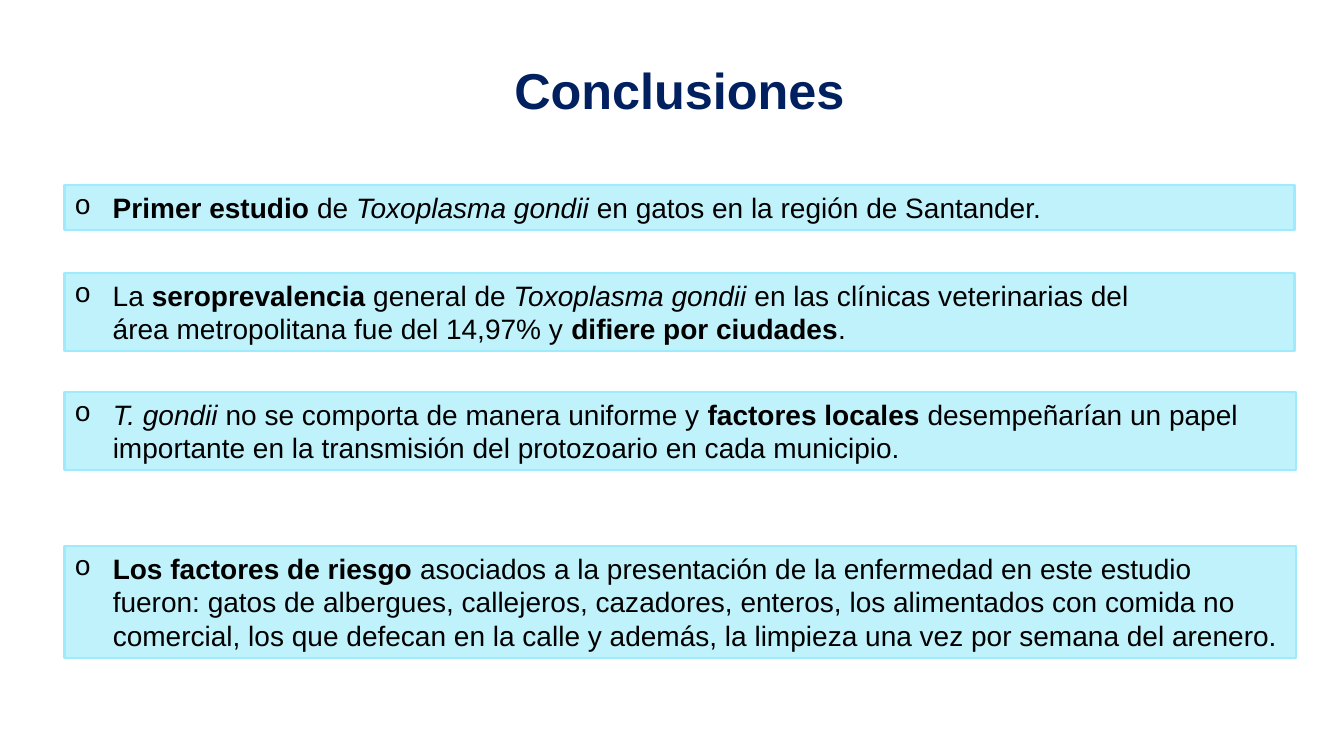
from lxml import etree
from pptx import Presentation
from pptx.dml.color import RGBColor
from pptx.enum import shapes, text
from pptx.oxml.ns import qn
from pptx.util import Inches, Pt

NBSP = chr(160)  # keeps "área metropolitana" on one line
COLORS = {"title": "002060", "text": "000000", "fill": "C0F2FB", "line": "9DEBFC"}
TITLE = "Conclusiones"

# Each box: top, width, height, then runs of (text, style); b = bold, i = italic
CONCLUSIONS = [
    (1.84, 12.2, 0.44, [
        ("Primer estudio ", "b"), ("de ", ""), ("Toxoplasma gondii", "i"),
        (" en gatos en la región de Santander.", "")]),
    (2.71, 12.2, 0.77, [
        ("La ", ""), ("seroprevalencia", "b"), (" general de ", ""),
        ("Toxoplasma gondii", "i"),
        (f" en las clínicas veterinarias del área{NBSP}metropolitana fue del 14,97% y ", ""),
        ("difiere por ciudades", "b"), (".", "")]),
    (3.89, 12.21, 0.77, [
        ("T. gondii ", "i"), ("no se comporta de manera uniforme y ", ""),
        ("factores locales ", "b"),
        ("desempeñarían un papel importante en la transmisión del protozoario "
         "en cada municipio.", "")]),
    (5.42, 12.21, 1.11, [
        ("Los factores de riesgo ", "b"),
        ("asociados a la presentación de la enfermedad en este estudio fueron: "
         "gatos de albergues, callejeros, cazadores, enteros, los alimentados con "
         "comida no comercial, los que defecan en la calle y además, la limpieza "
         "una vez por semana del arenero.", "")]),
]
LEFT, INDENT = 0.64, 0.38


def rgb(name):
    return RGBColor.from_string(COLORS[name])


def add_run(p, content, size=20, color="text", bold=False, italic=False):
    r = p.add_run()
    r.text = content
    r.font.name, r.font.size = "Arial", Pt(size)
    r.font.bold, r.font.italic = bold, italic
    r.font.color.rgb = rgb(color)


def add_bullet(p):
    pPr = p._p.get_or_add_pPr()
    pPr.set("marL", str(Inches(INDENT)))
    pPr.set("indent", str(-Inches(INDENT)))
    etree.SubElement(pPr, qn("a:buFont")).set("typeface", "Courier New")
    etree.SubElement(pPr, qn("a:buChar")).set("char", "o")


prs = Presentation()
prs.slide_width, prs.slide_height = Inches(13.33), Inches(7.5)
s = prs.slides.add_slide(prs.slide_layouts[5])

# Title
title = s.shapes.title
title.left, title.top = Inches(0.43), Inches(0.44)
title.width, title.height = Inches(12.62), Inches(0.96)
title.text_frame.vertical_anchor = text.MSO_ANCHOR.MIDDLE
p = title.text_frame.paragraphs[0]
p.alignment, p.line_spacing = text.PP_ALIGN.CENTER, 0.9
add_run(p, TITLE, size=36, color="title", bold=True)

# Conclusion boxes
for top, width, height, runs in CONCLUSIONS:
    sp = s.shapes.add_shape(shapes.MSO_SHAPE.RECTANGLE, Inches(LEFT), Inches(top),
                            Inches(width), Inches(height))
    sp.shadow.inherit = False
    sp.fill.solid()
    sp.fill.fore_color.rgb = rgb("fill")
    sp.line.color.rgb = rgb("line")
    sp.line.width = Pt(1.5)
    tf = sp.text_frame
    tf.word_wrap = True
    tf.auto_size = text.MSO_AUTO_SIZE.SHAPE_TO_FIT_TEXT
    tf.vertical_anchor = text.MSO_ANCHOR.TOP
    p = tf.paragraphs[0]
    p.alignment = text.PP_ALIGN.LEFT
    add_bullet(p)
    for content, style in runs:
        add_run(p, content, bold=style == "b", italic=style == "i")

prs.save("out.pptx")
